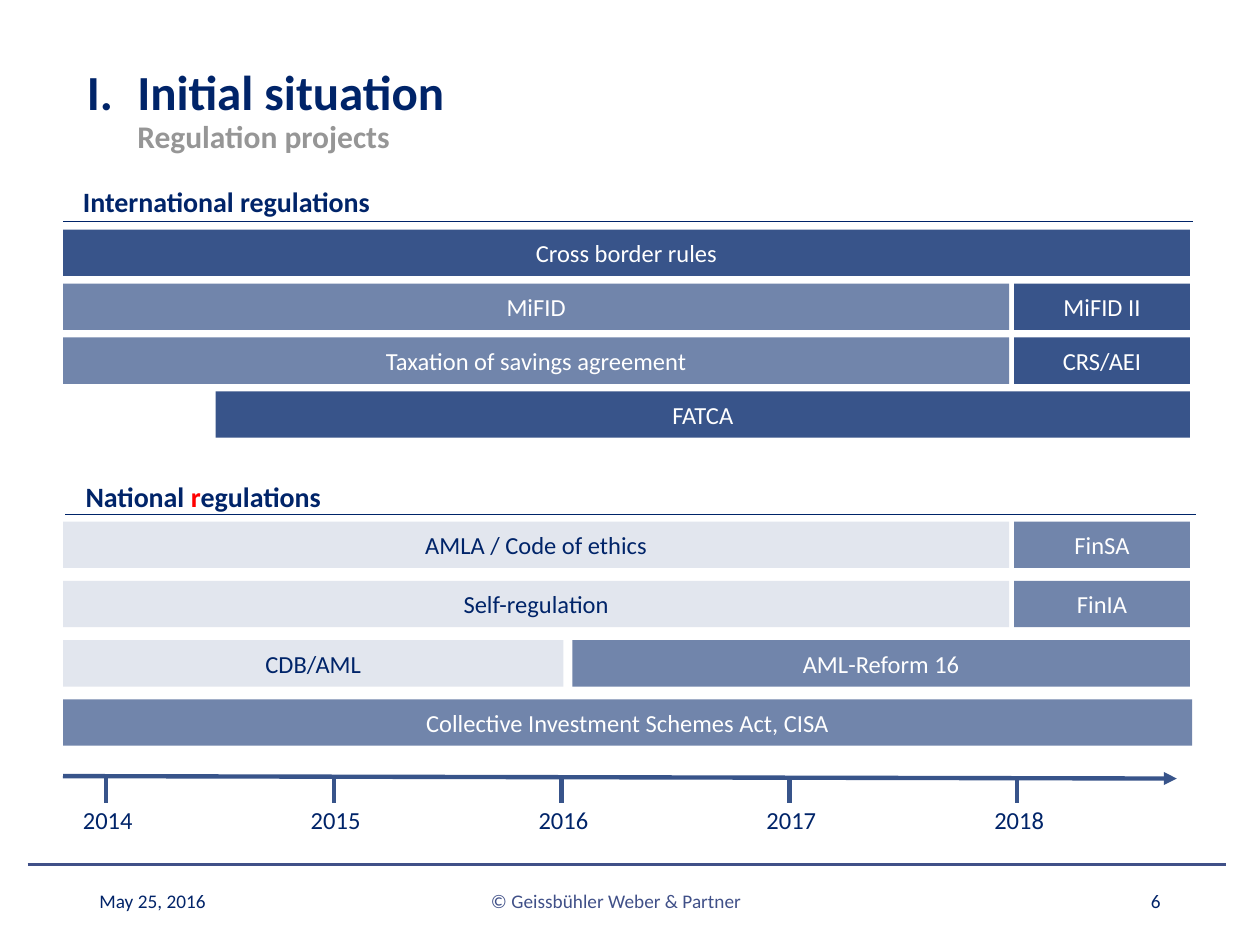
from copy import deepcopy

from lxml.etree import SubElement
from pptx import Presentation
from pptx.dml.color import RGBColor
from pptx.enum.shapes import MSO_CONNECTOR, MSO_SHAPE
from pptx.enum.text import MSO_ANCHOR, MSO_AUTO_SIZE, PP_ALIGN
from pptx.oxml.ns import qn
from pptx.util import Pt

NAVY = RGBColor(0x00, 0x24, 0x69)
DARK = RGBColor(0x38, 0x54, 0x8A)
MID = RGBColor(0x71, 0x85, 0xAB)
PALE = RGBColor(0xE2, 0xE6, 0xEE)
WHITE = RGBColor(0xFF, 0xFF, 0xFF)
GREY = RGBColor(0x96, 0x96, 0x96)
RED = RGBColor(0xFF, 0x00, 0x00)
FOOTER_BLUE = RGBColor(0x40, 0x50, 0x88)
FOOTER_NAVY = RGBColor(0x02, 0x24, 0x69)

TITLE = "I.\tInitial situation"
SUBTITLE = "Regulation projects"

# Each row is a list of bars: text, left, right, fill
LEFT, SPLIT_END, SPLIT_START, RIGHT = 36, 576.7, 579.5, 680
SECTIONS = [
    {
        "heading": [("International regulations", NAVY)],
        "heading_box": (40.3, 102.2, 180.7, 26.6),
        "rule": (36, 126.7),
        "top": 131.2, "pitch": 30.8,
        "rows": [
            [("Cross border rules", LEFT, RIGHT, DARK)],
            [("MiFID", LEFT, SPLIT_END, MID), ("MiFID II", SPLIT_START, RIGHT, DARK)],
            [("Taxation of savings agreement", LEFT, SPLIT_END, MID),
             ("CRS/AEI", SPLIT_START, RIGHT, DARK)],
            [("FATCA", 123.2, RIGHT, DARK)],
        ],
    },
    {
        "heading": [("National ", NAVY), ("r", RED), ("egulations", NAVY)],
        "heading_box": (41.8, 270.7, 156.2, 26.6),
        "rule": (37.4, 293.8),
        "top": 298.1, "pitch": 33.85,
        "rows": [
            [("AMLA / Code of ethics", LEFT, SPLIT_END, PALE),
             ("FinSA", SPLIT_START, RIGHT, MID)],
            [("Self-regulation", LEFT, SPLIT_END, PALE), ("FinIA", SPLIT_START, RIGHT, MID)],
            [("CDB/AML", LEFT, 322, PALE), ("AML-Reform 16", 327, RIGHT, MID)],
            [("Collective Investment Schemes Act, CISA", LEFT, 681.2, MID)],
        ],
    },
]
BAR_HEIGHT = 26.5
RULE_LENGTH = 645.8

YEARS = ["2014", "2015", "2016", "2017", "2018"]
YEAR_PITCH = 130.2
FIRST_TICK, FIRST_LABEL = 60.5, 40.3
AXIS_TOP, TICK_BOTTOM, LABEL_TOP = 443.5, 458.6, 456.5

# Text, box, alignment, anchor, colour
FOOTERS = [
    ("May 25, 2016", (49.7, 500.4, 162, 28.8), PP_ALIGN.LEFT, MSO_ANCHOR.MIDDLE, FOOTER_NAVY),
    ("© Geissbühler Weber & Partner", (221.8, 504.7, 260.6, 20.9),
     PP_ALIGN.CENTER, MSO_ANCHOR.TOP, FOOTER_BLUE),
    ("6", (508.3, 500.4, 162, 28.8), PP_ALIGN.RIGHT, MSO_ANCHOR.MIDDLE, FOOTER_NAVY),
]


def add_run(p, text, size, color, bold=False):
    r = p.add_run()
    r.text = text
    for name, value in {"name": "Calibri", "size": Pt(size), "bold": bold}.items():
        setattr(r.font, name, value)
    r.font.color.rgb = color
    return r


def add_text(s, box, runs, size, bold=False, align=PP_ALIGN.LEFT,
             anchor=MSO_ANCHOR.TOP, wrap=False):
    """Add a text box holding one paragraph of (text, colour) runs."""
    tf = s.shapes.add_textbox(*map(Pt, box)).text_frame
    tf.word_wrap = wrap
    tf.vertical_anchor = anchor
    p = tf.paragraphs[0]
    p.alignment = align
    for text, color in runs:
        add_run(p, text, size, color, bold)


def add_line(s, x1, y1, x2, y2, color, width, arrow=False):
    line = s.shapes.add_connector(MSO_CONNECTOR.STRAIGHT, *map(Pt, (x1, y1, x2, y2)))
    line.line.color.rgb = color
    line.line.width = Pt(width)
    if arrow:
        SubElement(line.line._get_or_add_ln(), qn("a:tailEnd"), type="triangle")
    SubElement(line._element.spPr, qn("a:effectLst"))


def add_bar(s, text, left, right, top, fill):
    sp = s.shapes.add_shape(MSO_SHAPE.RECTANGLE, Pt(left), Pt(top),
                            Pt(right - left), Pt(BAR_HEIGHT))
    sp.shadow.inherit = False
    sp.fill.solid()
    sp.fill.fore_color.rgb = fill
    sp.line.fill.background()
    tf = sp.text_frame
    tf.word_wrap = True
    tf.vertical_anchor = MSO_ANCHOR.MIDDLE
    p = tf.paragraphs[0]
    p.alignment = PP_ALIGN.CENTER
    add_run(p, text, 14, NAVY if fill == PALE else WHITE)


def fill_title(sp):
    box = {"left": 42.5, "top": 35.3, "width": 527, "height": 81.4}
    for name, value in box.items():
        setattr(sp, name, Pt(value))
    tf = sp.text_frame
    tf.word_wrap = True
    tf.auto_size = MSO_AUTO_SIZE.NONE
    tf.vertical_anchor = MSO_ANCHOR.TOP
    p = tf.paragraphs[0]
    p.alignment = PP_ALIGN.LEFT
    p.line_spacing = 0.9
    pPr = p._p.get_or_add_pPr()
    pPr.set("marL", str(Pt(28.8)))
    pPr.set("indent", str(Pt(-28.8)))
    r = add_run(p, TITLE, 28, NAVY, bold=True)
    # The line break takes the size of the title, so the first line stays low
    p._p.add_br().append(deepcopy(r._r.rPr))
    add_run(p, SUBTITLE, 18, GREY, bold=True)


def main():
    prs = Presentation()
    prs.slide_width, prs.slide_height = Pt(720), Pt(540)
    s = prs.slides.add_slide(prs.slide_layouts[5])
    fill_title(s.shapes.title)

    for section in SECTIONS:
        add_text(s, section["heading_box"], section["heading"], 16, bold=True)
        x, y = section["rule"]
        add_line(s, x, y, x + RULE_LENGTH, y, NAVY, 0.5)
        for i, row in enumerate(section["rows"]):
            for text, left, right, fill in row:
                add_bar(s, text, left, right, section["top"] + i * section["pitch"], fill)

    for i, year in enumerate(YEARS):
        x = FIRST_TICK + i * YEAR_PITCH
        add_line(s, x, AXIS_TOP, x, TICK_BOTTOM, DARK, 2.5)
        add_text(s, (FIRST_LABEL + i * YEAR_PITCH, LABEL_TOP, 45.4, 23), [(year, NAVY)], 14)
    add_line(s, LEFT, AXIS_TOP, 672.5, AXIS_TOP + 1.4, DARK, 2.5, arrow=True)

    add_line(s, 15.8, 493.9, 700.6, 493.9, FOOTER_BLUE, 1.5)
    for text, box, align, anchor, color in FOOTERS:
        add_text(s, box, [(text, color)], 11, align=align, anchor=anchor, wrap=True)

    prs.save("out.pptx")


if __name__ == "__main__":
    main()
